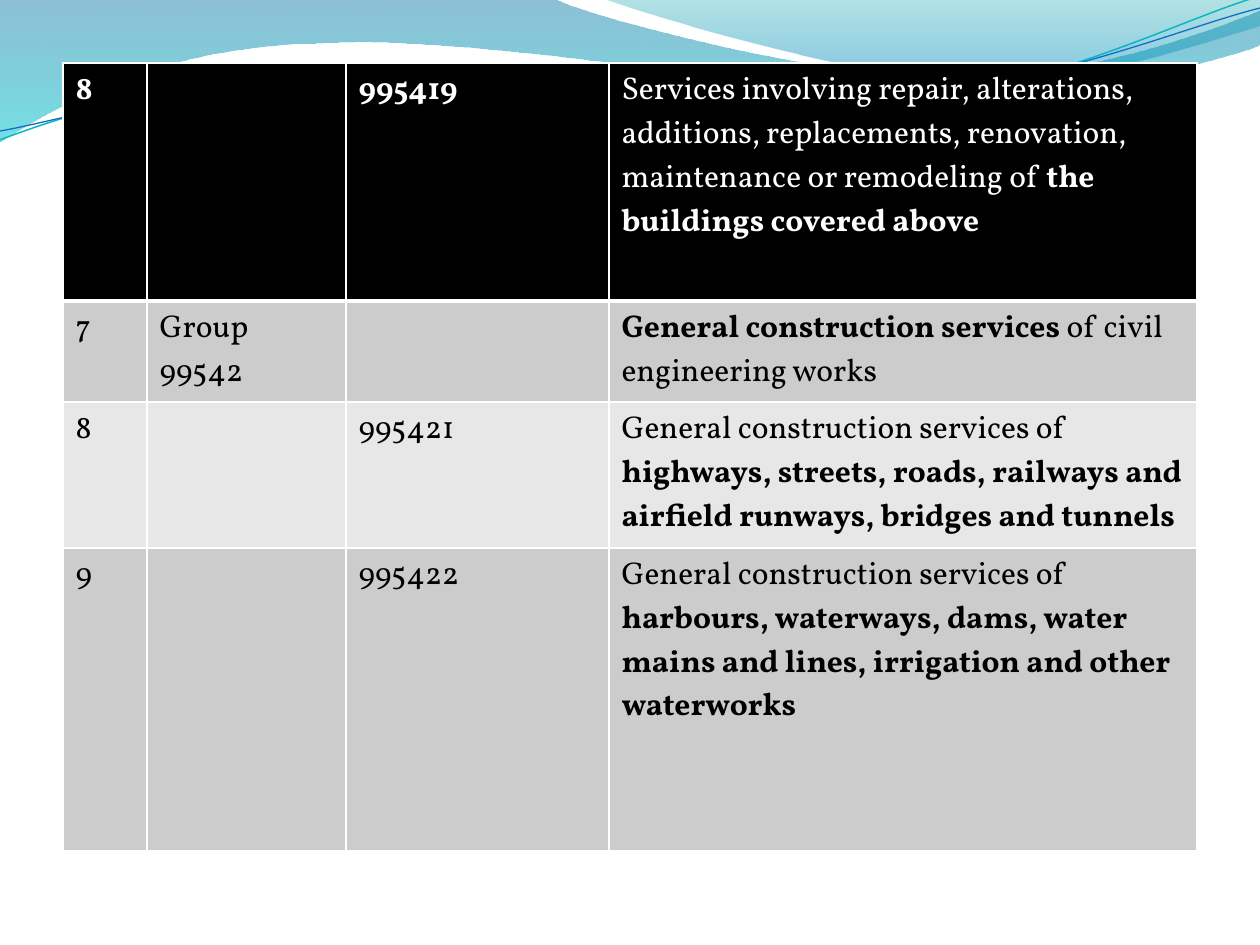
import math

from lxml import etree
from pptx import Presentation
from pptx import util as u
from pptx.dml.color import RGBColor
from pptx.oxml import ns

PX = 914400 / 126
COLORS = {
    "white": "FFFFFF", "black": "000000", "grey": "CCCCCC", "pale": "E7E7E7",
    "deep": "0074A1", "aqua": "00C6CF", "teal": "00A1A9", "sky": "008BBF",
    "teal line": "0AB8BF", "blue line": "0F6FC6",
}

deck = Presentation()
deck.slide_width, deck.slide_height = u.Emu(round(1260 * PX)), u.Emu(round(945 * PX))
page = deck.slides.add_slide(deck.slide_layouts[6])


def add_curve(start, segments, close, tilt=0, center=(0, 0)):
    cos, sin = math.cos(math.radians(tilt)), math.sin(math.radians(tilt))
    points = [start]
    for segment in segments:
        points.extend(zip(segment[::2], segment[1::2]))
    offsets = [(x - center[0], y - center[1]) for x, y in points]
    points = [(round((center[0] + x * cos + y * sin) * PX),
               round((center[1] - x * sin + y * cos) * PX)) for x, y in offsets]
    builder = page.shapes.build_freeform(*points[0], scale=1.0)
    builder.add_line_segments(points[1:], close=close)
    shape = builder.convert_to_shape()
    shape.shadow.inherit = False
    shape.rotation = tilt
    steps = iter(list(shape.element.spPr.iter(ns.qn("a:lnTo"))))
    for segment in segments:
        first = next(steps)
        if len(segment) == 6:
            first.tag = ns.qn("a:cubicBezTo")
            for step in (next(steps), next(steps)):
                first.append(step[0])
                step.getparent().remove(step)
    return shape


waves = [
    ((0, 0), [(554, -1), (600, 21, 837, 79, 955, 79), (1075, 79, 1207, 33, 1260, 11),
              (1261, 45), (1239, 55, 1096, 96, 940, 94), (784, 94, 481, 35, 324, 43),
              (163, 45, 58, 105, -1, 142), (0, 0)],
     [(0, "deep", 45), (1, "aqua", 55)]),
    ((604, -1), [(641, 14, 859, 78, 969, 82), (1079, 87, 1211, 40, 1260, 26), (1260, 0),
                 (604, -1)],
     [(0, "teal", 30), (0.8, "sky", 45)]),
]
for start, segments, stops in waves:
    wave = add_curve(start, segments, True)
    wave.line.fill.background()
    wave.fill.gradient()
    wave.fill.gradient_angle = 270
    for stop, (position, color, opacity) in zip(wave.fill.gradient_stops, stops):
        stop.position = position
        stop.color.rgb = RGBColor.from_string(COLORS[color])
    for rgb, (_, _, opacity) in zip(wave.element.spPr.iter(ns.qn("a:srgbClr")), stops):
        etree.SubElement(rgb, ns.qn("a:alpha"), val=str(opacity * 1000))

strands = [
    ((0, 140), [(60, 117, 199, 72, 349, 66), (498, 59, 747, 112, 898, 101),
                (1050, 89, 1182, 19, 1257, -3)], (629, 72), "teal line", 0.85),
    ((0, 131), [(59, 121, 207, 77, 357, 71), (508, 64, 752, 106, 903, 95),
                (1053, 84, 1187, 26, 1260, 8)], (629, 74), "blue line", 0.75),
]
for start, segments, center, color, width in strands:
    strand = add_curve(start, segments, False, 357.3, center)
    strand.fill.background()
    strand.line.color.rgb = RGBColor.from_string(COLORS[color])
    strand.line.width = u.Pt(width)

columns = [84, 199, 263, 588]
heights = [238, 101, 146, 303]
fills = ["black", "grey", "pale", "grey"]
services = [
    [[("8", True)], [], [("995419", True)],
     [("Services involving repair, alterations, additions, replacements, renovation, "
       "maintenance or remodeling of ", False), ("the buildings covered above", True)]],
    [[("7", False)], [("Group 99542", False)], [],
     [("General construction services", True), (" of civil engineering works", False)]],
    [[("8", False)], [], [("995421", False)],
     [("General construction services of ", False),
      ("highways, streets, roads, railways and airfield runways, bridges and tunnels", True)]],
    [[("9", False)], [], [("995422", False)],
     [("General construction services of ", False),
      ("harbours, waterways, dams, water mains and lines, irrigation and other waterworks",
       True)]],
]
frame = page.shapes.add_table(len(heights), len(columns), *(
    u.Emu(round(length * PX)) for length in (63, 63, sum(columns), sum(heights))))
table = frame.table
for column, width in zip(table.columns, columns):
    column.width = u.Emu(round(width * PX))
for index, (row, height) in enumerate(zip(table.rows, heights)):
    row.height = u.Emu(round(height * PX))
    for cell, spans in zip(row.cells, services[index]):
        cell.fill.solid()
        cell.fill.fore_color.rgb = RGBColor.from_string(COLORS[fills[index]])
        para = cell.text_frame.paragraphs[0]
        para.font.name = "Vollkorn"
        para.font.size = u.Pt(18)
        para.font.color.rgb = RGBColor.from_string(COLORS["black" if index else "white"])
        for words, bold in spans:
            span = para.add_run()
            span.text = words
            span.font.bold = bold

for cell in table.rows[0].cells:
    properties = cell._tc.get_or_add_tcPr()
    for place, (side, width) in enumerate(zip("LRTB", (1, 1, 1, 3))):
        border = etree.Element(ns.qn("a:ln" + side), w=str(u.Pt(width)))
        solid = etree.SubElement(border, ns.qn("a:solidFill"))
        etree.SubElement(solid, ns.qn("a:srgbClr"), val=COLORS["white"])
        properties.insert(place, border)

deck.save("out.pptx")
